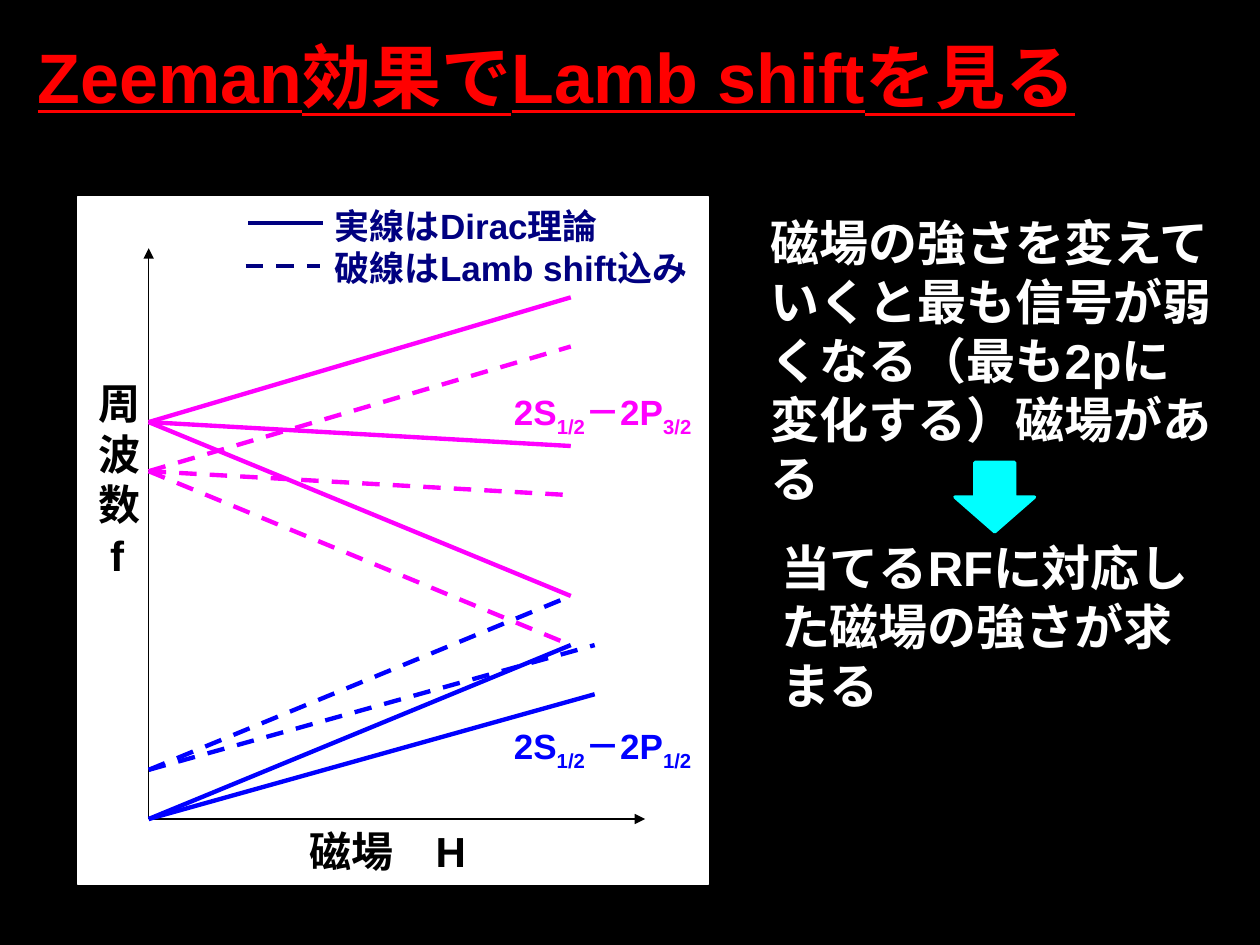
from pptx import Presentation
from pptx.dml.color import RGBColor
from pptx.enum.dml import MSO_LINE
from pptx.enum.shapes import MSO_CONNECTOR, MSO_SHAPE
from pptx.enum.text import PP_ALIGN
from pptx.oxml.ns import qn
from pptx.util import Inches, Pt
from lxml import etree

DASH = MSO_LINE.DASH
STRAIGHT = MSO_CONNECTOR.STRAIGHT
RECTANGLE = MSO_SHAPE.RECTANGLE
DOWN_ARROW = MSO_SHAPE.DOWN_ARROW
LEFT, CENTER = PP_ALIGN.LEFT, PP_ALIGN.CENTER

THEME = {
    "font": "Arial",
    "black": "000000", "white": "FFFFFF", "red": "FF0000", "navy": "000080",
    "magenta": "FF00FF", "blue": "0000FF", "cyan": "00FFFF",
    "title": 40, "body": 28, "axis": 24, "label": 20,
    "thin": 0.75, "thick": 2.5, "arrow": 2,
}


def transition(upper):
    return [("2S", False), ("1/2", True), ("－2P", False), (upper, True)]


TEXTS = [
    ((0.2, 0.22, 8.86, 0.77), "title", "red", [([("Zeeman効果でLamb shiftを見る", False)], LEFT)]),
    ((6.1, 4.22, 3.59, 1.29), "body", "white",
     [([("当てるRFに対応した磁場の強さが求まる", False)], LEFT)]),
    ((6.02, 1.64, 3.75, 1.81), "body", "white",
     [([("磁場の強さを変えていくと最も信号が弱くなる（最も2pに変化する）磁場がある", False)], LEFT)]),
    ((2.36, 6.5, 1.77, 0.4), "axis", "black", [([("磁場　H", False)], LEFT)]),
    ((0.68, 2.95, 0.5, 1.97), "axis", "black",
     [([("周波数", False)], LEFT), ([("f", False)], CENTER)]),
    ((2.56, 1.57, 3.07, 0.7), "label", "navy",
     [([("実線はDirac理論", False)], LEFT), ([("破線はLamb shift込み", False)], LEFT)]),
    ((3.98, 3.05, 1.88, 0.63), "label", "magenta", [(transition("3/2"), LEFT)]),
    ((3.98, 5.7, 1.73, 0.4), "label", "blue", [(transition("1/2"), LEFT)]),
]

PANEL = (0.62, 1.56, 5, 5.46)
RESULT_ARROW = (7.58, 3.67, 0.63, 0.55)
AXIS_X, AXIS_Y = 1.18, 6.5
AXIS_ENDS = [(AXIS_X, 1.97), (5.12, AXIS_Y)]
LAMB_SHIFT = 0.39
LEVELS = [
    ("magenta", 3.35, LAMB_SHIFT, [(4.53, 2.36), (4.53, 3.54), (4.53, 4.73)]),
    ("blue", AXIS_Y, -LAMB_SHIFT, [(4.53, 5.12), (4.72, 5.51)]),
]
LEGEND_KEYS = [(1.97, 1.77, False), (1.95, 2.11, True)]
LEGEND_KEY_WIDTH = 0.59


def color(name):
    return RGBColor.from_string(THEME[name])


def add_line(slide, start, end, tint, weight="thick", dashed=False, arrow=False):
    line = slide.shapes.add_connector(STRAIGHT, *map(Inches, start + end))
    line.line.color.rgb = color(tint)
    line.line.width = Pt(THEME[weight])
    if dashed:
        line.line.dash_style = DASH
    properties = line._element.spPr
    if arrow:
        etree.SubElement(properties.find(qn("a:ln")), qn("a:tailEnd"), type="triangle")
    etree.SubElement(properties, qn("a:effectLst"))


def add_block(slide, kind, place, tint, weight):
    block = slide.shapes.add_shape(kind, *map(Inches, place))
    block.shadow.inherit = False
    block.fill.solid()
    block.fill.fore_color.rgb = block.line.color.rgb = color(tint)
    block.line.width = Pt(THEME[weight])


def add_text(slide, place, size, tint, paragraphs):
    frame = slide.shapes.add_textbox(*map(Inches, place)).text_frame
    frame.word_wrap = True
    font_format = {"name": THEME["font"], "size": Pt(THEME[size]),
                   "bold": True, "underline": size == "title"}
    for index, (pieces, alignment) in enumerate(paragraphs):
        paragraph = frame.add_paragraph() if index else frame.paragraphs[0]
        paragraph.alignment = alignment
        for wording, subscript in pieces:
            run = paragraph.add_run()
            run.text = wording
            for attribute, value in font_format.items():
                setattr(run.font, attribute, value)
            run.font.color.rgb = color(tint)
            if subscript:
                run._r.get_or_add_rPr().set("baseline", "-25000")


def main():
    deck = Presentation()
    deck.slide_width, deck.slide_height = Inches(10), Inches(7.5)
    slide = deck.slides.add_slide(deck.slide_layouts[6])
    slide.background.fill.solid()
    slide.background.fill.fore_color.rgb = color("black")

    add_block(slide, RECTANGLE, PANEL, "white", "thin")
    for end in AXIS_ENDS:
        add_line(slide, (AXIS_X, AXIS_Y), end, "black", "thin", arrow=True)
    for dashed in (False, True):
        for tint, origin, shift, ends in LEVELS:
            offset = shift if dashed else 0
            for x, y in ends:
                add_line(slide, (AXIS_X, origin + offset), (x, y + offset), tint, dashed=dashed)
    for x, y, dashed in LEGEND_KEYS:
        add_line(slide, (x, y), (x + LEGEND_KEY_WIDTH, y), "navy", dashed=dashed)
    for text in TEXTS:
        add_text(slide, *text)
    add_block(slide, DOWN_ARROW, RESULT_ARROW, "cyan", "arrow")
    deck.save("out.pptx")


if __name__ == "__main__":
    main()
